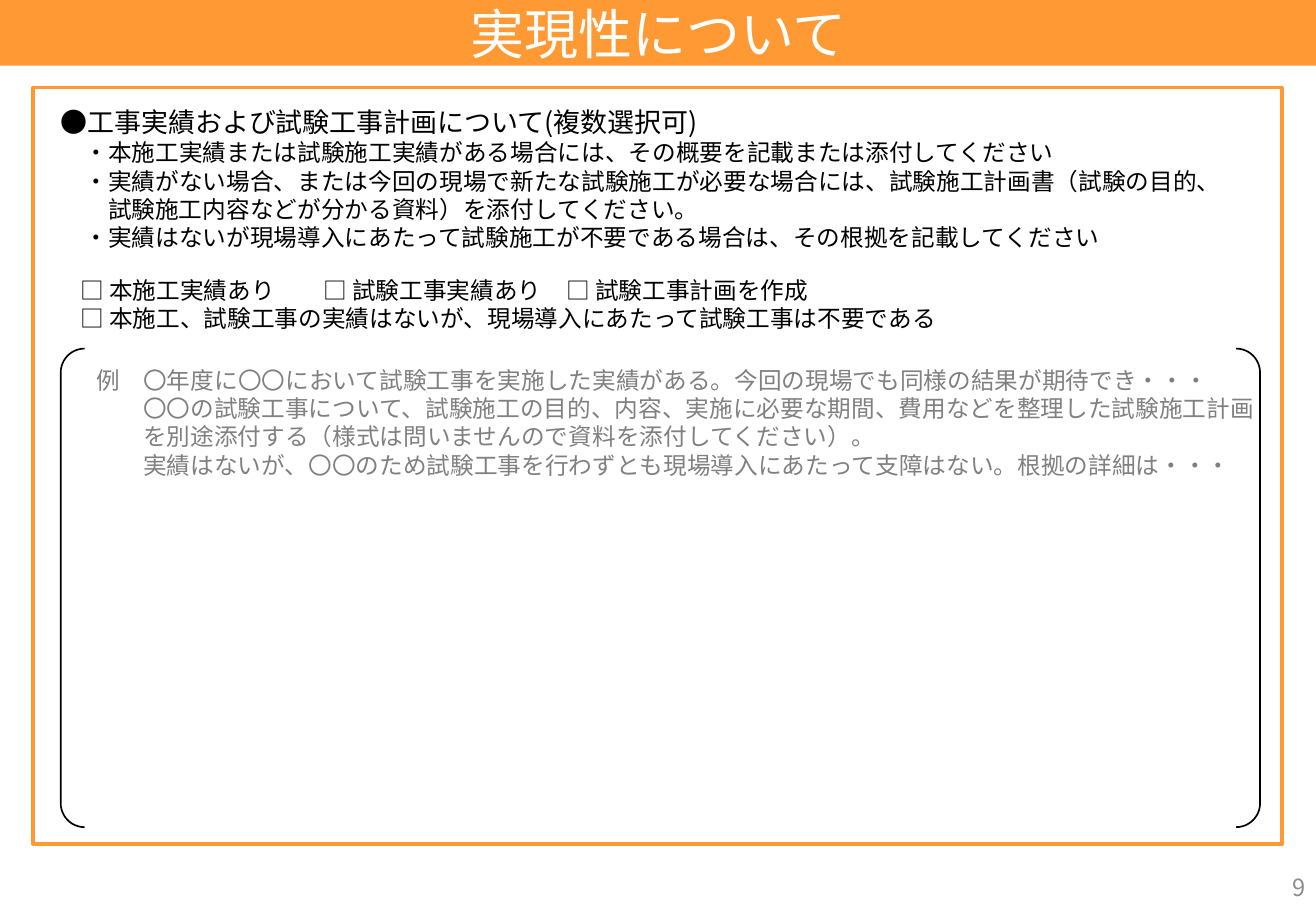
from dataclasses import dataclass

from lxml.etree import SubElement
from pptx import Presentation
from pptx.dml.color import RGBColor
from pptx.enum.shapes import MSO_SHAPE as Shape
from pptx.enum.text import MSO_ANCHOR as Anchor, PP_ALIGN as Align
from pptx.oxml.ns import qn
from pptx.util import Pt

PX = 9144


@dataclass(frozen=True)
class Theme:
    font: str = "Noto Sans CJK JP"
    accent: str = "FF9933"
    ink: str = "000000"
    paper: str = "FFFFFF"
    example: str = "808080"
    number: str = "8C8C8C"
    title_size: int = 32
    heading_size: int = 16
    body_size: int = 14


THEME = Theme()

GUIDANCE = [
    ("・本施工実績または試験施工実績がある場合には、その概要を記載または添付してください", 1),
    ("・実績がない場合、または今回の現場で新たな試験施工が必要な場合には、試験施工計画書（試験の目的、", 1),
    ("試験施工内容などが分かる資料）を添付してください。", 2),
    ("・実績はないが現場導入にあたって試験施工が不要である場合は、その根拠を記載してください", 1),
]
CHOICES = [
    ("□ 本施工実績あり\t□ 試験工事実績あり\t□ 試験工事計画を作成", 0),
    ("□ 本施工、試験工事の実績はないが、現場導入にあたって試験工事は不要である", 0),
]
EXAMPLES = [
    ("例　〇年度に〇〇において試験工事を実施した実績がある。今回の現場でも同様の結果が期待でき・・・", 0),
    ("〇〇の試験工事について、試験施工の目的、内容、実施に必要な期間、費用などを整理した試験施工計画", 2),
    ("を別途添付する（様式は問いませんので資料を添付してください）。", 2),
    ("実績はないが、〇〇のため試験工事を行わずとも現場導入にあたって支障はない。根拠の詳細は・・・", 2),
]
CHOICE_STOPS = (199, 418)


def px(*lengths):
    return [length * PX for length in lengths]


def add_outline(page, kind, bounds, fill=None, line=None, width=1):
    shape = page.shapes.add_shape(kind, *px(*bounds))
    shape.shadow.inherit = False
    if fill:
        shape.fill.solid()
        shape.fill.fore_color.rgb = RGBColor.from_string(fill)
    else:
        shape.fill.background()
    if line:
        shape.line.color.rgb = RGBColor.from_string(line)
        shape.line.width = Pt(width)
    else:
        shape.line.fill.background()
    return shape


def format_para(para, size, color, align, indent):
    para.alignment = align
    properties = para._p.get_or_add_pPr()
    properties.set("marL", str(Pt(size * indent)))
    properties.set("indent", "0")
    for span in para.runs:
        span.font.name = THEME.font
        span.font.size = Pt(size)
        span.font.color.rgb = RGBColor.from_string(color)
        SubElement(span._r.get_or_add_rPr(), qn("a:ea"), typeface=THEME.font)


def add_text(page, bounds, lines, size, color, align=Align.LEFT, anchor=Anchor.TOP, inset=0):
    box = page.shapes.add_textbox(*px(*bounds))
    frame = box.text_frame
    frame.word_wrap = True
    frame.vertical_anchor = anchor
    frame.margin_left = frame.margin_right = inset * PX
    frame.margin_top = frame.margin_bottom = 0
    frame.text = "\n".join(text for text, indent in lines)
    for para, (text, indent) in zip(frame.paragraphs, lines):
        format_para(para, size, color, align, indent)
    return box


def add_tab_stops(para, stops):
    tabs = SubElement(para._p.get_or_add_pPr(), qn("a:tabLst"))
    for stop in stops:
        SubElement(tabs, qn("a:tab"), pos=str(stop * PX), algn="l")


def main():
    deck = Presentation()
    deck.slide_width, deck.slide_height = px(1083, 750)
    page = deck.slides.add_slide(deck.slide_layouts[6])
    body = THEME.body_size

    add_outline(page, Shape.RECTANGLE, (0, 0, 1083, 54), fill=THEME.accent)
    add_text(page, (385, 0, 314, 54), [("実現性について", 0)], THEME.title_size,
             THEME.paper, Align.CENTER, Anchor.MIDDLE)
    add_outline(page, Shape.RECTANGLE, (27, 72, 1028, 623), line=THEME.accent, width=2)

    heading = ("●工事実績および試験工事計画について(複数選択可)", 0)
    guidance = add_text(page, (50, 87, 962, 121), [heading, *GUIDANCE], body, THEME.ink)
    for span in guidance.text_frame.paragraphs[0].runs:
        span.font.size = Pt(THEME.heading_size)

    choices = add_text(page, (66, 227, 717, 47), CHOICES, body, THEME.ink)
    add_tab_stops(choices.text_frame.paragraphs[0], CHOICE_STOPS)

    bracket = add_outline(page, Shape.DOUBLE_BRACKET, (50, 287, 987, 394), line=THEME.ink)
    bracket.adjustments[0] = 0.05
    add_text(page, (79, 301, 962, 94), EXAMPLES, body, THEME.example)

    add_text(page, (840, 710, 244, 40), [("9", 0)], body, THEME.number,
             Align.RIGHT, Anchor.MIDDLE, inset=10)
    deck.save("out.pptx")


if __name__ == "__main__":
    main()
